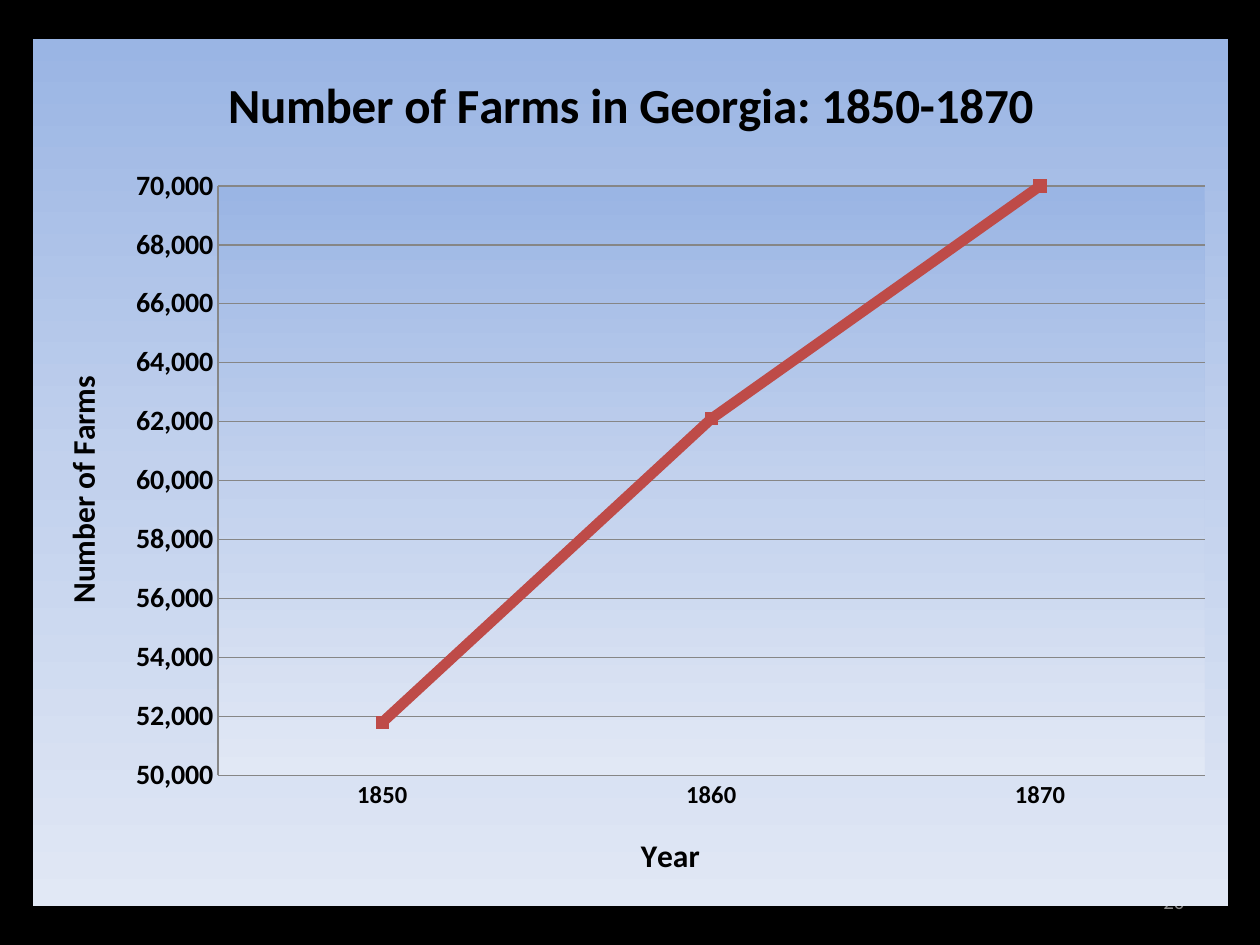
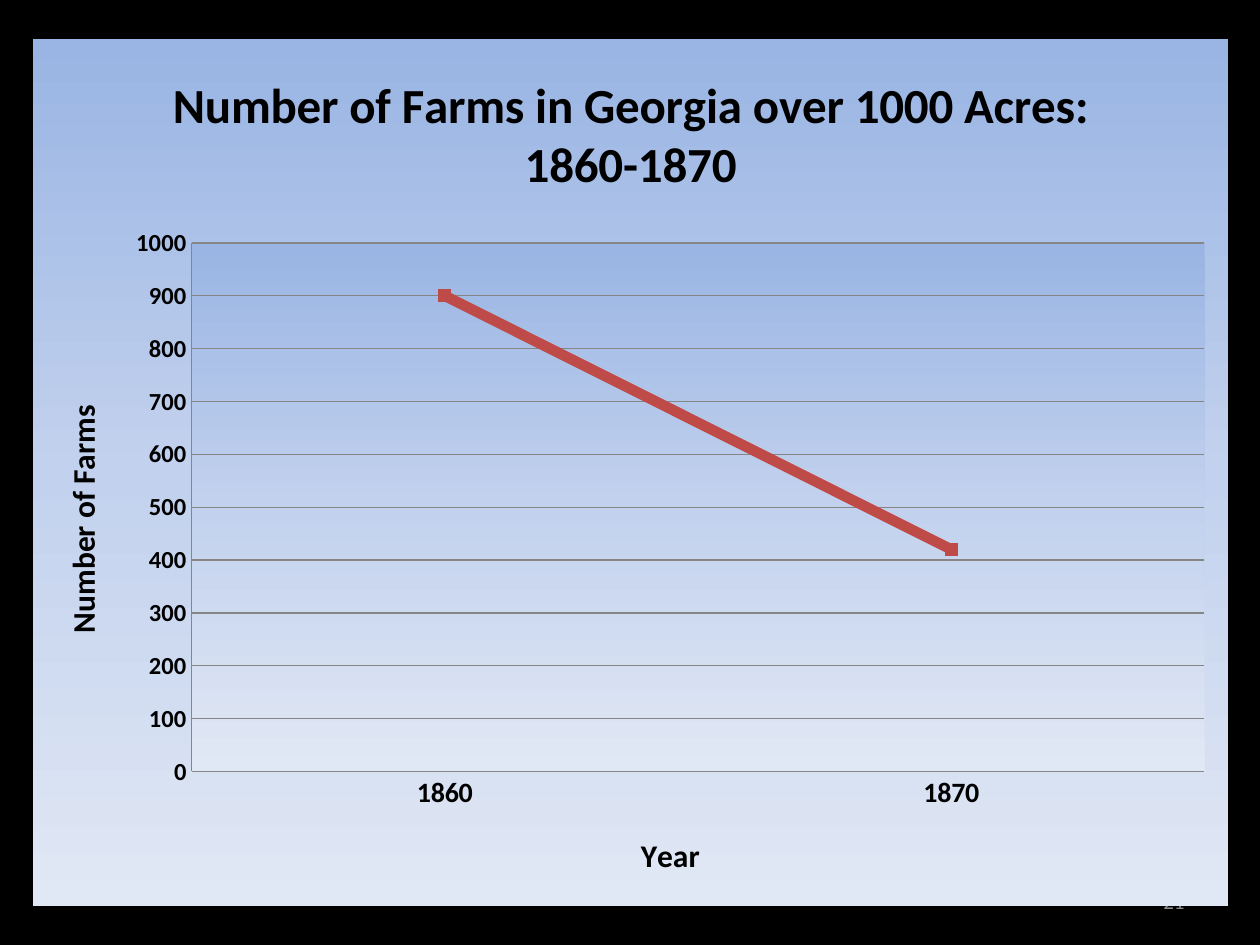
from dataclasses import dataclass
from lxml import etree
from pptx import Presentation
from pptx.chart.data import CategoryChartData
from pptx.dml.color import RGBColor
from pptx.enum.chart import XL_CHART_TYPE, XL_MARKER_STYLE, XL_TICK_MARK
from pptx.enum.text import MSO_ANCHOR, PP_ALIGN
from pptx.oxml import parse_xml
from pptx.oxml.ns import nsdecls, qn
from pptx.util import Pt

LINE = XL_CHART_TYPE.LINE_MARKERS
SQUARE = XL_MARKER_STYLE.SQUARE
NO_TICK = XL_TICK_MARK.NONE
MIDDLE = MSO_ANCHOR.MIDDLE
RIGHT = PP_ALIGN.RIGHT

SLIDES = [
    dict(page="20", title="Number of Farms in Georgia: 1850-1870",
         years=["1850", "1860", "1870"], farms=[51800, 62100, 70000],
         low=50000, high=70000, step=2000, form="#,##0",
         year_size=14, farm_size=16),
    dict(page="21", title="Number of Farms in Georgia over 1000 Acres: 1860-1870",
         years=["1860", "1870"], farms=[900, 420],
         low=0, high=1000, step=100, form="General",
         year_size=16, farm_size=14),
]
YEAR_NAME = "Year"
FARM_NAME = "Number of Farms"


@dataclass(frozen=True)
class Theme:
    font: str = "Calibri"
    back: str = "000000"
    ink: str = "000000"
    page: str = "8C8C8C"
    grid: str = "868686"
    trend: str = "BE4B48"
    fade: tuple = ((0, "9AB5E4"), (50, "C2D1ED"), (100, "E1E8F5"))
    title_size: int = 28
    name_size: int = 18
    base_size: int = 10
    page_size: int = 12
    trend_width: int = 6
    mark_size: int = 7


THEME = Theme()
SIZE = (720, 540)
CHART_BOX = (18.72, 22.32, 683.28, 495.36)
PAGE_BOX = (516.24, 500.4, 167.76, 28.8)


def color(code):
    return RGBColor.from_string(code)


def points(box):
    return [Pt(n) for n in box]


def style(font, size, bold=True, ink=THEME.ink):
    font.name = THEME.font
    font.size = Pt(size)
    font.bold = bold
    font.color.rgb = color(ink)


def fade():
    stops = "".join(
        f'<a:gs pos="{pos * 1000}"><a:srgbClr val="{code}"/></a:gs>'
        for pos, code in THEME.fade)
    return parse_xml(
        f'<c:spPr {nsdecls("c", "a")}><a:gradFill rotWithShape="1">'
        f'<a:gsLst>{stops}</a:gsLst><a:lin ang="5400000" scaled="0"/>'
        '</a:gradFill><a:ln><a:noFill/></a:ln></c:spPr>')


def paint(chart):
    body = chart.element.find(qn("c:chart"))
    plot = body.find(qn("c:plotArea"))
    for old in plot.findall(qn("c:spPr")):
        plot.remove(old)
    plot.append(fade())
    body.addnext(fade())


def label(owner, text, size):
    title = owner.chart_title if hasattr(owner, "chart_title") else owner.axis_title
    title.text_frame.text = text
    style(title.text_frame.paragraphs[0].font, size)
    root = title.text_frame.paragraphs[0]._p.getparent().getparent().getparent()
    over = root.find(qn("c:overlay"))
    if over is None:
        over = etree.Element(qn("c:overlay"))
        spot = root.find(qn("c:layout"))
        (root.find(qn("c:tx")) if spot is None else spot).addnext(over)
    over.set("val", "0")


def rule(line):
    line.color.rgb = color(THEME.grid)
    line.width = Pt(0.75)


def set_axis(axis, name, size):
    axis.major_tick_mark = axis.minor_tick_mark = NO_TICK
    style(axis.tick_labels.font, size)
    rule(axis.format.line)
    label(axis, name, THEME.name_size)


def add_page(slide, text):
    frame = slide.shapes.add_textbox(*points(PAGE_BOX)).text_frame
    frame.word_wrap = True
    frame.vertical_anchor = MIDDLE
    para = frame.paragraphs[0]
    para.text = text
    para.alignment = RIGHT
    style(para.font, THEME.page_size, False, THEME.page)


def add_graph(slide, item):
    data = CategoryChartData(number_format=item["form"])
    data.categories = item["years"]
    data.add_series("Series 1", item["farms"])
    chart = slide.shapes.add_chart(LINE, *points(CHART_BOX), data).chart
    style(chart.font, THEME.base_size, False)
    chart.has_legend = False
    label(chart, item["title"], THEME.title_size)

    set_axis(chart.category_axis, YEAR_NAME, item["year_size"])
    axis = chart.value_axis
    set_axis(axis, FARM_NAME, item["farm_size"])
    axis.minimum_scale = item["low"]
    axis.maximum_scale = item["high"]
    axis.major_unit = item["step"]
    axis.tick_labels.number_format = item["form"]
    axis.tick_labels.number_format_is_linked = False
    axis.has_major_gridlines = True
    rule(axis.major_gridlines.format.line)

    chart.plots[0].vary_by_categories = False
    trend = chart.plots[0].series[0]
    trend.smooth = False
    trend.format.line.color.rgb = color(THEME.trend)
    trend.format.line.width = Pt(THEME.trend_width)
    mark = trend.marker
    mark.style = SQUARE
    mark.size = THEME.mark_size
    mark.format.fill.solid()
    mark.format.fill.fore_color.rgb = color(THEME.trend)
    mark.format.line.color.rgb = color(THEME.trend)
    paint(chart)


def main():
    deck = Presentation()
    deck.slide_width, deck.slide_height = points(SIZE)
    for item in SLIDES:
        slide = deck.slides.add_slide(deck.slide_layouts[6])
        slide.background.fill.solid()
        slide.background.fill.fore_color.rgb = color(THEME.back)
        add_page(slide, item["page"])
        add_graph(slide, item)
    deck.save("out.pptx")


if __name__ == "__main__":
    main()
